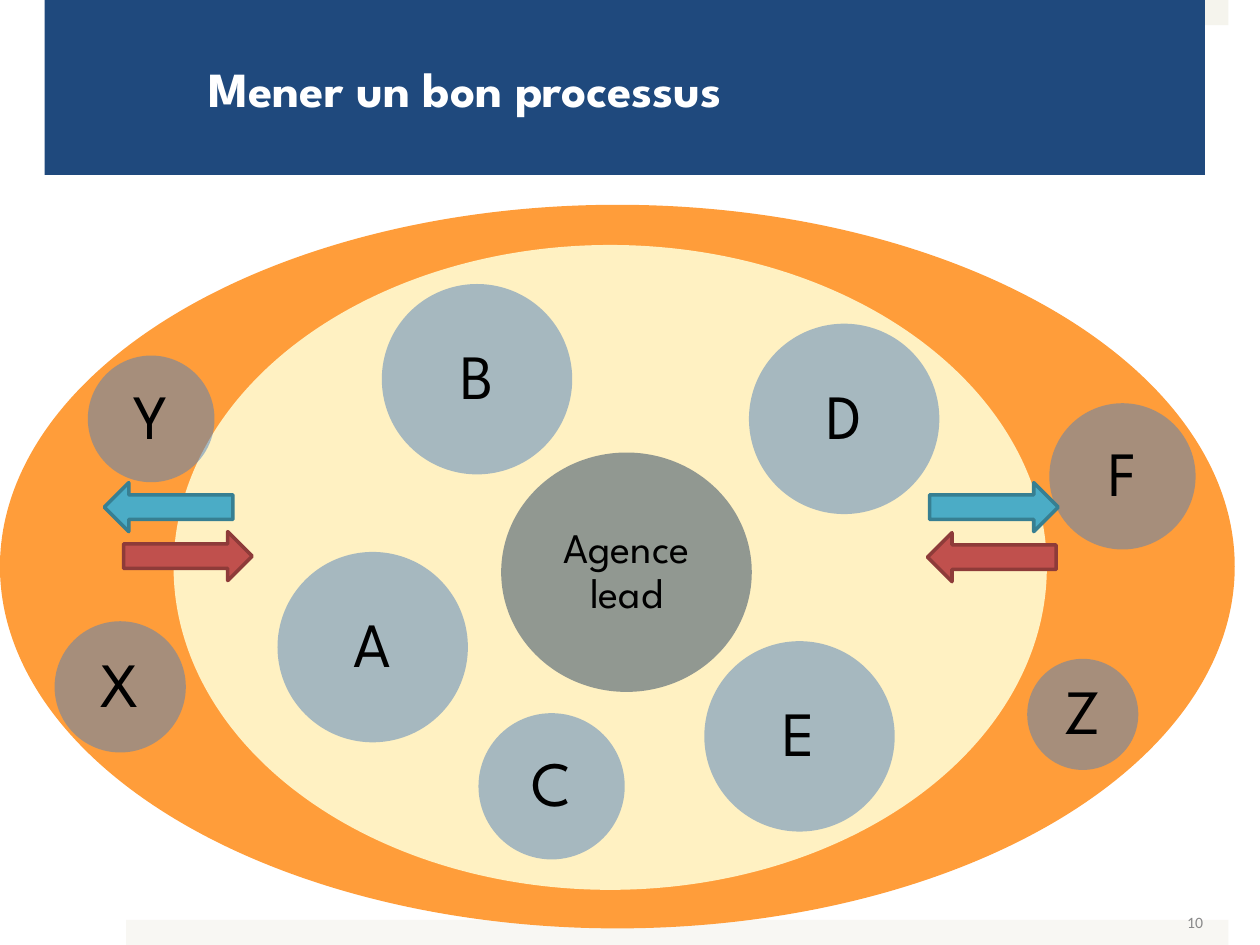
from lxml import etree
from pptx import Presentation
from pptx.dml.color import RGBColor
from pptx.enum import shapes, text
from pptx.oxml import ns
from pptx.util import Pt

COLORS = {
    "band_top": "F5F4ED", "band_bottom": "F8F7F3", "number": "898989",
    "outer": "FF9D3A", "inner": "FFF1C2", "title": "1F497D",
    "lead": "254061", "agency": "4F81BD",
    "out": "4BACC6", "out_line": "377F92",
    "in": "C0504D", "in_line": "8E3B39",
    "black": "000000", "white": "FFFFFF",
}
SHAPE = shapes.MSO_SHAPE


def rgb(name):
    return RGBColor.from_string(COLORS[name])


class Diagram:
    """Style and current slide; all lengths are in points."""

    font = "League Spartan"

    def __init__(self, slide):
        self.slide = slide

    def set_text(self, frame, words, size, color, align, margins, font=None, bold=False):
        frame.word_wrap = True
        frame.auto_size = text.MSO_AUTO_SIZE.NONE
        frame.vertical_anchor = text.MSO_ANCHOR.MIDDLE
        side, top = margins
        frame.margin_left = frame.margin_right = Pt(side)
        frame.margin_top = frame.margin_bottom = Pt(top)
        frame.text = words
        paragraph = frame.paragraphs[0]
        paragraph.alignment = align
        style = paragraph.runs[0].font
        style.name, style.size, style.bold = font or self.font, Pt(size), bold
        style.color.rgb = rgb(color)
        return paragraph

    def shape(self, kind, box, fill, line=None, alpha=None):
        item = self.slide.shapes.add_shape(kind, *map(Pt, box))
        item.shadow.inherit = False
        item.fill.solid()
        item.fill.fore_color.rgb = rgb(fill)
        if line:
            item.line.color.rgb = rgb(line)
            item.line.width = Pt(2)
        else:
            item.line.fill.background()
        if alpha:
            color = item._element.spPr.find(ns.qn("a:solidFill")).find(ns.qn("a:srgbClr"))
            etree.SubElement(color, ns.qn("a:alpha")).set("val", str(alpha * 1000))
        return item

    def title(self, words, box):
        heading = self.slide.shapes.title
        heading.left, heading.top, heading.width, heading.height = map(Pt, box)
        heading.fill.solid()
        heading.fill.fore_color.rgb = rgb("title")
        frame = heading.text_frame
        self.set_text(frame, words, 28, "white", text.PP_ALIGN.LEFT, (21.6, 3.6), bold=True)
        frame.margin_left = Pt(93.6)
        # Bring the heading in front of the top band
        self.slide.shapes._spTree.append(heading._element)

    def agency(self, words, box, fill="agency", size=36, margin=3.6):
        circle = self.shape(SHAPE.OVAL, box, fill, alpha=50)
        paragraph = self.set_text(circle.text_frame, words, size, "black",
                                  text.PP_ALIGN.CENTER, (margin, margin))
        paragraph.line_spacing = 0.9

    def arrow(self, left, top, flow, to_left):
        arrow = self.shape(SHAPE.RIGHT_ARROW, (left, top, 73.5, 28), flow, flow + "_line")
        arrow.rotation = 180 if to_left else 0

    def number(self, words, box):
        label = self.slide.shapes.add_textbox(*map(Pt, box))
        self.set_text(label.text_frame, words, 9, "number", text.PP_ALIGN.RIGHT,
                      (5, 2.9), font="Calibri")


def main():
    deck = Presentation()
    deck.slide_width, deck.slide_height = Pt(720), Pt(540)
    diagram = Diagram(deck.slides.add_slide(deck.slide_layouts[5]))

    # Page bands and number
    diagram.shape(SHAPE.RECTANGLE, (72, 0, 630, 14.4), "band_top")
    diagram.shape(SHAPE.RECTANGLE, (72, 525.6, 630, 14.4), "band_bottom")
    diagram.number("10", (525, 512.8, 167.5, 28.8))

    # Outer and inner circles of the process
    diagram.shape(SHAPE.OVAL, (0, 117, 705.6, 413.5), "outer")
    diagram.shape(SHAPE.OVAL, (99.2, 140, 499, 368.5), "inner")
    diagram.title("Mener un bon processus", (25.5, 0, 663, 100))

    # Lead agency, then the others as name, left, top, diameter
    diagram.agency("Agence lead", (286.4, 258.6, 143.2, 136.8), "lead", 24, 2.2)
    for name, left, top, size in (
        ("D", 428, 185, 108.8),
        ("F", 599.6, 230.4, 83.6),
        ("Z", 587, 376.5, 63.5),
        ("E", 402.5, 366.4, 108.8),
        ("C", 273.4, 407.5, 83.6),
        ("A", 158.6, 315.4, 108.8),
        ("X", 31.2, 355, 75),
        ("Y", 50.2, 203.2, 72.4),
        ("B", 218.2, 162.3, 108.8),
    ):
        diagram.agency(name, (left, top, size, size))

    # Moves out of and into the process
    diagram.arrow(531.2, 275.8, "out", to_left=False)
    diagram.arrow(59.6, 275.8, "out", to_left=True)
    diagram.arrow(70.6, 303.8, "in", to_left=False)
    diagram.arrow(530, 304.4, "in", to_left=True)

    deck.save("out.pptx")


if __name__ == "__main__":
    main()
